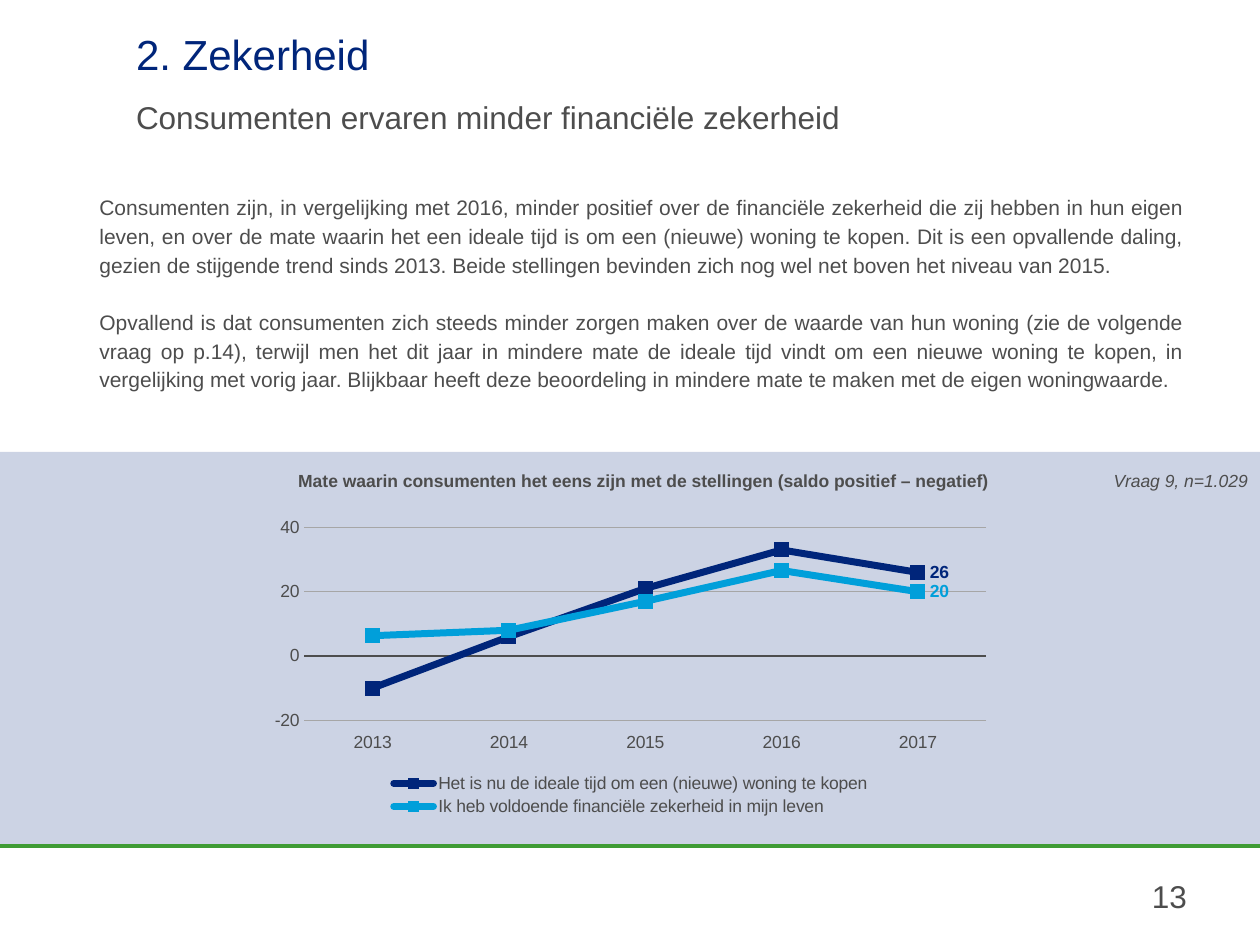
from lxml import etree
from pptx import Presentation
from pptx import util as u
from pptx.chart.data import CategoryChartData
from pptx.dml.color import RGBColor
from pptx.enum import chart as ch, shapes, text
from pptx.oxml import parse_xml
from pptx.oxml.ns import nsdecls, qn

NAVY = RGBColor(0x00, 0x25, 0x7A)
CYAN = RGBColor(0x00, 0x9F, 0xDA)
GREEN = RGBColor(0x3F, 0x9C, 0x35)
GREY = RGBColor(0x4D, 0x4D, 0x4D)
RULE = RGBColor(0xA6, 0xA6, 0xA6)
SCALE = 914400 / 126
LEFT, MID, RIGHT, BOTH = (text.PP_ALIGN.LEFT, text.PP_ALIGN.CENTER,
                          text.PP_ALIGN.RIGHT, text.PP_ALIGN.JUSTIFY)

BODY = [
    "Consumenten zijn, in vergelijking met 2016, minder positief over de financiële zekerheid "
    "die zij hebben in hun eigen leven, en over de mate waarin het een ideale tijd is om een "
    "(nieuwe) woning te kopen. Dit is een opvallende daling, gezien de stijgende trend sinds "
    "2013. Beide stellingen bevinden zich nog wel net boven het niveau van 2015.",
    "Opvallend is dat consumenten zich steeds minder zorgen maken over de waarde van hun woning "
    "(zie de volgende vraag op p.14), terwijl men het dit jaar in mindere mate de ideale tijd "
    "vindt om een nieuwe woning te kopen, in vergelijking met vorig jaar. Blijkbaar heeft deze "
    "beoordeling in mindere mate te maken met de eigen woningwaarde.",
]
YEARS = ["2013", "2014", "2015", "2016", "2017"]
SERIES = [
    ("Het is nu de ideale tijd om een (nieuwe) woning te kopen", [-10, 6, 21, 33, 26], NAVY),
    ("Ik heb voldoende financiële zekerheid in mijn leven", [6.3, 8, 17, 26.6, 20], CYAN),
]


def px(*vals):
    return [u.Emu(round(v * SCALE)) for v in vals]


def put(obj, fmt):
    for key, val in fmt.items():
        setattr(obj, key, val)


def place(part, x, y, w, h, inner=False):
    """Fix a chart part at fractions of the chart area."""
    old = part.find(qn("c:layout"))
    if old is not None:
        part.remove(old)
    target = '<c:layoutTarget val="inner"/>' if inner else ""
    modes = "".join(f'<c:{k}Mode val="edge"/>' for k in "xy")
    sizes = "".join(f'<c:{k} val="{v}"/>' for k, v in zip("xywh", (x, y, w, h)))
    node = parse_xml(f'<c:layout {nsdecls("c")}><c:manualLayout>{target}{modes}{sizes}'
                     '</c:manualLayout></c:layout>')
    pos = part.find(qn("c:legendPos"))
    if pos is None:
        part.insert(0, node)
    else:
        pos.addnext(node)


class Deck:
    face = "Arial"

    def __init__(self):
        self.prs = Presentation()
        self.prs.slide_width, self.prs.slide_height = px(1260, 945)
        self.slide = self.prs.slides.add_slide(self.prs.slide_layouts[5])

    def font(self, font, size, color=GREY, **more):
        put(font, dict(name=self.face, size=u.Pt(size), **more))
        font.color.rgb = color

    def title(self, box, head, sub):
        shape = self.slide.shapes.title
        put(shape, dict(zip(("left", "top", "width", "height"), px(*box))))
        frame = shape.text_frame
        put(frame, dict(margin_left=0, margin_right=0, margin_top=0, margin_bottom=0,
                        word_wrap=True, auto_size=text.MSO_AUTO_SIZE.NONE,
                        vertical_anchor=text.MSO_ANCHOR.BOTTOM))
        para = frame.paragraphs[0]
        put(para, dict(alignment=LEFT, line_spacing=1.5))
        run = para.add_run()
        run.text = head
        self.font(run.font, 24, NAVY)
        para.add_line_break()
        etree.SubElement(para._p.find(qn("a:br")), qn("a:rPr"), sz="2400")
        run = para.add_run()
        run.text = sub
        self.font(run.font, 18)

    def text(self, box, lines, size, align, pad=True, gap=0, space=1.0, **more):
        frame = self.slide.shapes.add_textbox(*px(*box)).text_frame
        frame.word_wrap = True
        if not pad:
            put(frame, dict(margin_left=0, margin_right=0, margin_top=0, margin_bottom=0))
        for i, line in enumerate(lines):
            para = frame.paragraphs[0] if i == 0 else frame.add_paragraph()
            put(para, dict(alignment=align, line_spacing=space))
            if i:
                para.space_before = u.Pt(gap)
            run = para.add_run()
            run.text = line
            self.font(run.font, size, **more)

    def line(self, ends, color, width):
        rule = self.slide.shapes.add_connector(shapes.MSO_CONNECTOR.STRAIGHT, *px(*ends))
        rule.line.color.rgb = color
        rule.line.width = u.Pt(width)
        etree.SubElement(rule._element.spPr, qn("a:effectLst"))

    def band(self, box, color, alpha):
        """Draw a borderless rectangle, alpha in percent."""
        rect = self.slide.shapes.add_shape(shapes.MSO_SHAPE.RECTANGLE, *px(*box))
        rect.shadow.inherit = False
        rect.fill.solid()
        rect.fill.fore_color.rgb = color
        rect.line.fill.background()
        tint = rect._element.spPr.find(".//" + qn("a:srgbClr"))
        etree.SubElement(tint, qn("a:alpha"), val=str(alpha * 1000))

    def chart(self, box, cats, rows):
        data = CategoryChartData(number_format="0")
        data.categories = cats
        for name, vals, _ in rows:
            data.add_series(name, vals)
        kind = ch.XL_CHART_TYPE.LINE_MARKERS
        chart = self.slide.shapes.add_chart(kind, *px(*box), data).chart
        self.font(chart.font, 10)
        put(chart, dict(has_title=False, has_legend=True))
        put(chart.legend, dict(position=ch.XL_LEGEND_POSITION.BOTTOM, include_in_layout=False))
        self.font(chart.legend.font, 10)
        self.axes(chart)
        chart.plots[0].vary_by_categories = False
        for item, (_, _, color) in zip(chart.plots[0].series, rows):
            self.trace(item, color, len(cats) - 1)
        place(chart._chartSpace.chart.plotArea, 0.06, 0.05, 0.92, 0.62, inner=True)
        place(chart.legend._element, 0.17, 0.83, 0.66, 0.16)

    def axes(self, chart):
        cat, val = chart.category_axis, chart.value_axis
        for axis in (cat, val):
            put(axis, dict(major_tick_mark=ch.XL_TICK_MARK.NONE,
                           minor_tick_mark=ch.XL_TICK_MARK.NONE))
            self.font(axis.tick_labels.font, 10)
        cat.tick_label_position = ch.XL_TICK_LABEL_POSITION.LOW
        put(val, dict(minimum_scale=-20, maximum_scale=40, major_unit=20,
                      has_major_gridlines=True))
        put(val.tick_labels, dict(number_format="0", number_format_is_linked=False))
        val.format.line.fill.background()
        for line, color in ((cat.format.line, GREY), (val.major_gridlines.format.line, RULE)):
            line.color.rgb = color
            line.width = u.Pt(0.75)

    def trace(self, item, color, last):
        item.smooth = False
        item.format.line.color.rgb = color
        item.format.line.width = u.Pt(4)
        item._element.spPr.find(qn("a:ln")).set("cap", "rnd")
        put(item.marker, dict(style=ch.XL_MARKER_STYLE.SQUARE, size=8))
        item.marker.format.fill.solid()
        item.marker.format.fill.fore_color.rgb = color
        item.marker.format.line.color.rgb = color
        label = item.points[last].data_label
        self.font(label.font, 10, color, bold=True)
        label.position = ch.XL_LABEL_POSITION.RIGHT


def main():
    deck = Deck()
    deck.line((0, 846, 1260, 846), GREEN, 2.75)
    deck.title((136, 23, 1050, 113), "2. Zekerheid",
               "Consumenten ervaren minder financiële zekerheid")
    deck.text((1071, 877, 116, 42), ["13"], 18, RIGHT, pad=False)
    deck.band((0, 452, 1260, 392), NAVY, 20)
    deck.text((1096, 464, 164, 34), ["Vraag 9, n=1.029"], 10, RIGHT, italic=True)
    deck.text((136, 464, 1014, 34),
              ["Mate waarin consumenten het eens zijn met de stellingen "
               "(saldo positief – negatief)"], 10, MID, bold=True)
    deck.chart((260, 512, 741, 311), YEARS, SERIES)
    deck.text((87, 185, 1110, 244), BODY, 12, BOTH, gap=16.4, space=1.14)
    deck.prs.save("out.pptx")


if __name__ == "__main__":
    main()
